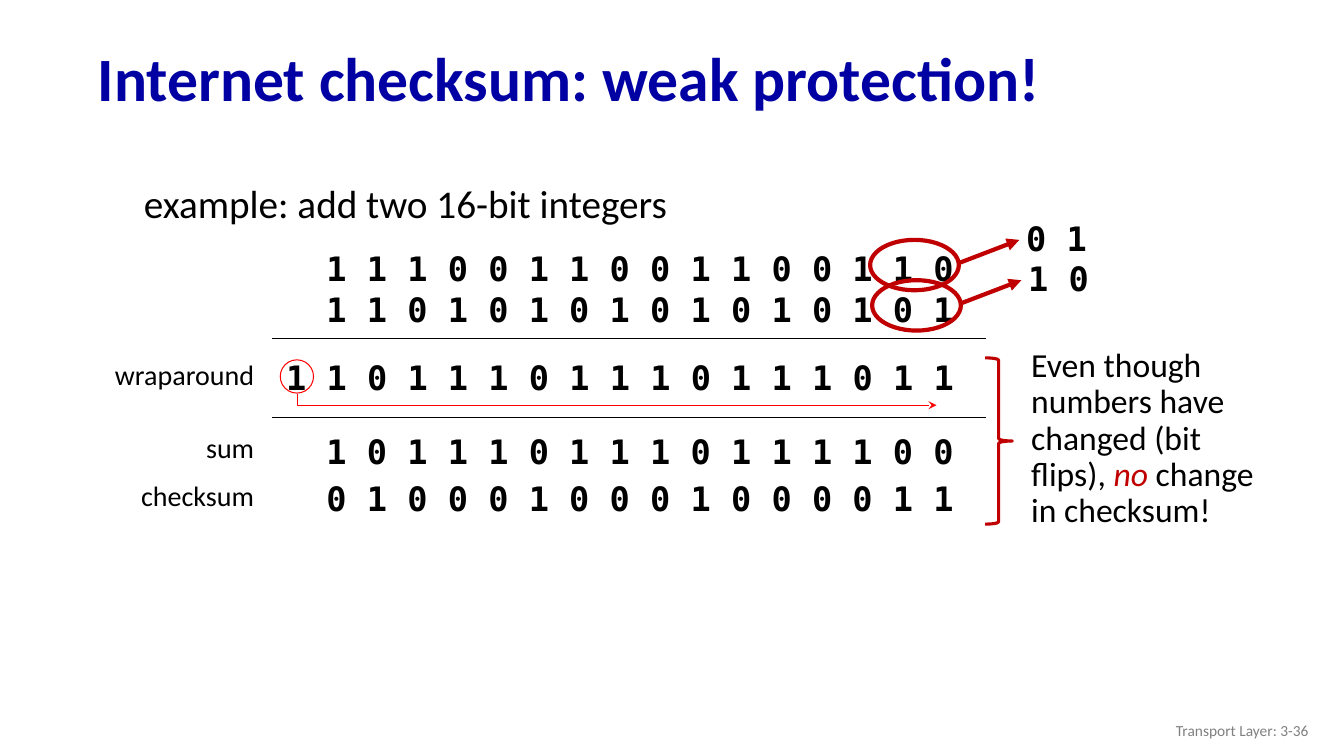
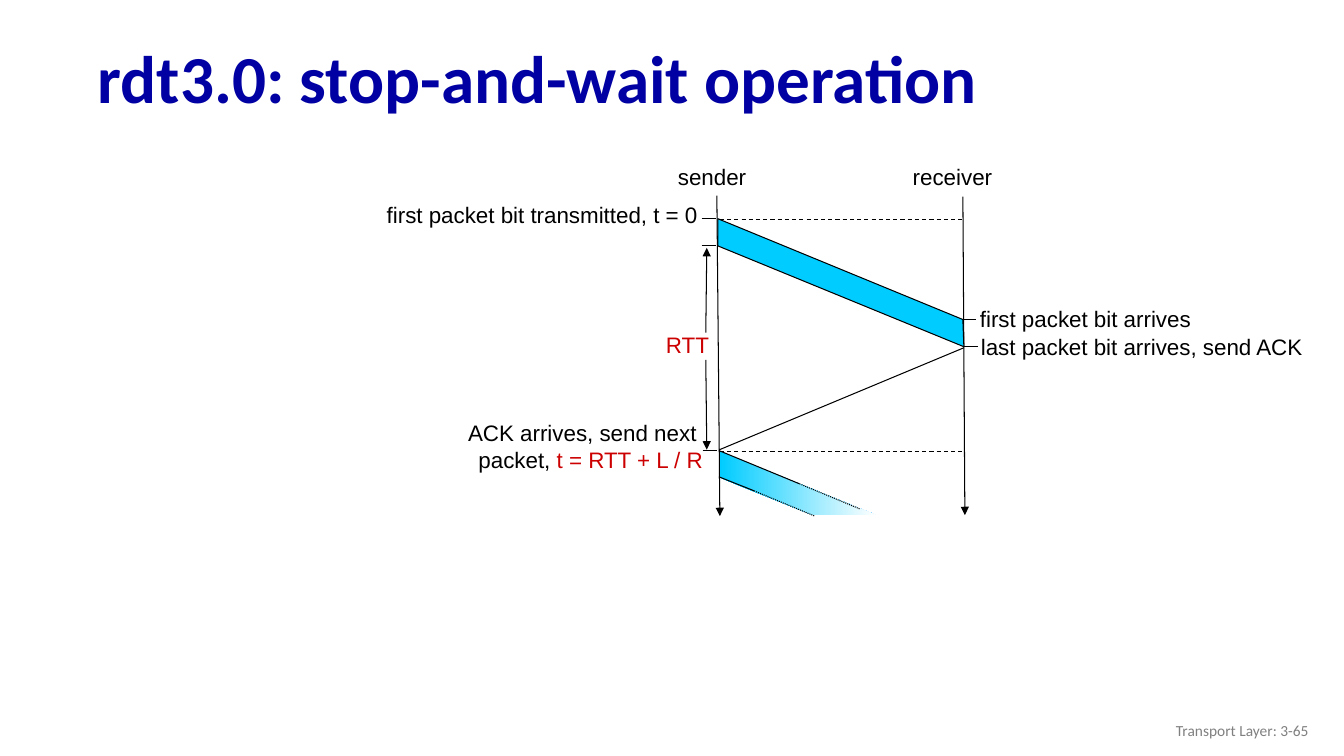
import lxml.etree
import pptx
import pptx.dml.color
import pptx.enum.dml
import pptx.enum.shapes
import pptx.enum.text
import pptx.oxml.ns
import pptx.util

Inches = pptx.util.Inches
SHAPE = pptx.enum.shapes.MSO_SHAPE
DASH = pptx.enum.dml.MSO_LINE
ALIGN = pptx.enum.text.PP_ALIGN
ANCHOR = pptx.enum.text.MSO_ANCHOR

COLORS = {
    "title": "0000A3",
    "ink": "000000",
    "footer": "808080",
    "carry": "FF0000",
    "flip": "C00000",
    "timing": "CC0000",
    "packet": "00CCFF",
    "paper": "FFFFFF",
}
BODY_FONT = "Calibri"
BITS_FONT = "DejaVu Sans Mono"
DIAGRAM_FONT = "Arial"
TITLE_ONLY = 5


def rgb(name):
    return pptx.dml.color.RGBColor.from_string(COLORS[name])


def format_span(span, text, font=BODY_FONT, size=24, color="ink", bold=False, italic=False):
    span.text = text
    span.font.name = font
    span.font.size = pptx.util.Pt(size)
    span.font.color.rgb = rgb(color)
    span.font.bold = bold
    span.font.italic = italic


def write_text(box, paragraphs, align=ALIGN.LEFT, anchor=ANCHOR.TOP, spacing=None,
               before=None, **style):
    frame = box.text_frame
    frame.word_wrap = True
    frame.auto_size = pptx.enum.text.MSO_AUTO_SIZE.NONE
    frame.vertical_anchor = anchor
    if isinstance(paragraphs, str):
        paragraphs = [[(paragraphs, {})]]
    for index, spans in enumerate(paragraphs):
        para = frame.add_paragraph() if index else frame.paragraphs[0]
        para.alignment = align
        para.line_spacing = spacing
        if before is not None:
            para.space_before = pptx.util.Pt(before)
        for text, changes in spans:
            format_span(para.add_run(), text, **{**style, **changes})


def add_text(page, paragraphs, left, top, width, height, **style):
    box = page.shapes.add_textbox(*map(Inches, (left, top, width, height)))
    write_text(box, paragraphs, **style)


def add_right_text(page, paragraphs, right, top, width, height, **style):
    add_text(page, paragraphs, right - width, top, width, height, align=ALIGN.RIGHT, **style)


def add_arrowhead(shape, kind):
    outline = shape._element.spPr.find(pptx.oxml.ns.qn("a:ln"))
    lxml.etree.SubElement(outline, pptx.oxml.ns.qn("a:tailEnd"), type=kind)


def format_line(line, color, weight):
    line.color.rgb = rgb(color)
    line.width = pptx.util.Pt(weight)


def add_line(page, start, end, color="ink", weight=0.75, dash=None, arrow=False):
    connector = page.shapes.add_connector(
        pptx.enum.shapes.MSO_CONNECTOR.STRAIGHT, *map(Inches, (*start, *end)))
    format_line(connector.line, color, weight)
    if dash is not None:
        connector.line.dash_style = dash
    if arrow:
        add_arrowhead(connector, "triangle")
    lxml.etree.SubElement(connector._element.spPr, pptx.oxml.ns.qn("a:effectLst"))


def add_outline(page, kind, left, top, width, height, color, weight):
    shape = page.shapes.add_shape(kind, *map(Inches, (left, top, width, height)))
    shape.shadow.inherit = False
    shape.fill.background()
    format_line(shape.line, color, weight)


def add_freeform(page, points, close=True):
    corners = [(Inches(x), Inches(y)) for x, y in points]
    builder = page.shapes.build_freeform(*corners[0])
    builder.add_line_segments(corners[1:], close=close)
    shape = builder.convert_to_shape()
    shape.shadow.inherit = False
    return shape


def add_page(deck, title, title_size, number):
    page = deck.slides.add_slide(deck.slide_layouts[TITLE_ONLY])
    box = page.shapes.title
    box.left, box.top, box.width, box.height = map(Inches, (0.87, 0.32, 12.14, 0.98))
    write_text(box, title, anchor=ANCHOR.MIDDLE, spacing=0.9, size=title_size,
               color="title", bold=True)
    add_right_text(page, f"Transport Layer: {number}", 13.08, 7.05, 3, 0.4,
                   anchor=ANCHOR.MIDDLE, size=11, color="footer")
    return page


def add_bits(page, bits, left, top):
    add_text(page, " ".join(bits), left, top, 0.4 * len(bits) + 0.4, 0.5,
             font=BITS_FONT, bold=True)


def add_bit_flip(page, bits, left, top):
    add_outline(page, SHAPE.OVAL, left, top, 0.88, 0.5, "flip", 3)
    add_line(page, (left + 0.88, top + 0.23), (left + 1.48, top), "flip", 3, arrow=True)
    add_bits(page, bits, left + 1.45, top - 0.27)


def build_checksum(deck):
    page = add_page(deck, "Internet checksum: weak protection!", 44, "3-36")
    add_text(page, "example: add two 16-bit integers", 1.33, 1.59, 8.5, 0.9,
             size=28, spacing=1.3, before=10)
    for bits, left, top in (
        ("1110011001100110", 3.14, 2.41),
        ("1101010101010101", 3.14, 2.82),
        ("11011101110111011", 2.74, 3.49),
        ("1011101110111100", 3.14, 4.23),
        ("0100010001000011", 3.14, 4.69),
    ):
        add_bits(page, bits, left, top)
    for label, top in (("wraparound", 3.5), ("sum", 4.22), ("checksum", 4.7)):
        add_right_text(page, label, 2.62, top, 1.6, 0.44, size=20)
    for y in (3.36, 4.14):
        add_line(page, (2.7, y), (9.78, y), weight=1)

    add_outline(page, SHAPE.OVAL, 2.78, 3.57, 0.33, 0.33, "carry", 0.75)
    carry = add_freeform(page, [(2.95, 3.91), (2.95, 4.02), (9.29, 4.02)], close=False)
    carry.fill.background()
    format_line(carry.line, "carry", 0.75)
    add_arrowhead(carry, "stealth")

    add_bit_flip(page, "01", 8.63, 2.38)
    add_bit_flip(page, "10", 8.65, 2.78)
    add_outline(page, SHAPE.RIGHT_BRACE, 9.77, 3.55, 0.27, 1.65, "flip", 2.25)
    add_text(page, [[
        ("Even though numbers have changed (bit flips), ", {}),
        ("no", {"color": "flip", "italic": True}),
        (" change in checksum!", {}),
    ]], 10.13, 3.41, 2.63, 1.92, spacing=0.9)


def build_stop_and_wait(deck):
    page = add_page(deck, "rdt3.0: stop-and-wait operation", 48, "3-65")
    label = {"font": DIAGRAM_FONT, "size": 16}

    for start, end in (
        ((7.11, 1.94), (7.14, 5.12)),
        ((9.55, 1.95), (9.57, 5.11)),
        ((7, 3.57), (7.01, 4.46)),
        ((7, 3.3), (7.01, 2.46)),
    ):
        add_line(page, start, end, arrow=True)
    for y in (2.18, 4.48):
        add_line(page, (7.14, y), (9.54, y), dash=DASH.DASH)
    add_line(page, (9.56, 3.45), (7.14, 4.46))

    packet = add_freeform(page, [(7.12, 2.17), (9.55, 3.17), (9.56, 3.44), (7.12, 2.44)])
    packet.fill.solid()
    packet.fill.fore_color.rgb = rgb("packet")
    format_line(packet.line, "ink", 0.75)

    for left, y in ((6.96, 2.17), (6.96, 2.44), (6.97, 4.47), (9.54, 3.17), (9.56, 3.44)):
        add_line(page, (left, y), (left + 0.14, y))

    next_packet = add_freeform(page, [(7.14, 4.48), (8.69, 5.11), (8.06, 5.11), (7.14, 4.74)])
    next_packet.fill.gradient()
    next_packet.fill.gradient_angle = 0
    for stop, color, position in zip(next_packet.fill.gradient_stops, ("packet", "paper"), (0, 1)):
        stop.color.rgb = rgb(color)
        stop.position = position
    next_packet.line.fill.background()
    for start, fade, end in (
        ((7.13, 4.47), (7.93, 4.8), (8.53, 5.05)),
        ((7.13, 4.73), (7.48, 4.87), (8.08, 5.12)),
    ):
        add_line(page, start, fade)
        add_line(page, fade, end, dash=DASH.ROUND_DOT)

    for text, right, top, width in (
        ("sender", 7.5, 1.57, 0.97),
        ("receiver", 9.94, 1.57, 1.03),
        ("first packet bit transmitted, t = 0", 7.02, 1.95, 3.53),
    ):
        add_right_text(page, text, right, top, width, 0.39, **label)
    add_right_text(page, "RTT", 7.13, 3.24, 0.88, 0.37, color="timing", **label)
    add_right_text(page, [
        [("ACK arrives, send next ", {})],
        [("packet, ", {}), ("t = RTT + L / R", {"color": "timing"})],
    ], 7.07, 4.11, 2.94, 0.69, **label)
    add_text(page, "first packet bit arrives", 9.62, 2.98, 2.65, 0.39, **label)
    add_text(page, "last packet bit arrives, send ACK", 9.63, 3.26, 3.41, 0.39, **label)


def main():
    deck = pptx.Presentation()
    deck.slide_width = Inches(13.33)
    deck.slide_height = Inches(7.5)
    build_checksum(deck)
    build_stop_and_wait(deck)
    deck.save("out.pptx")


if __name__ == "__main__":
    main()
